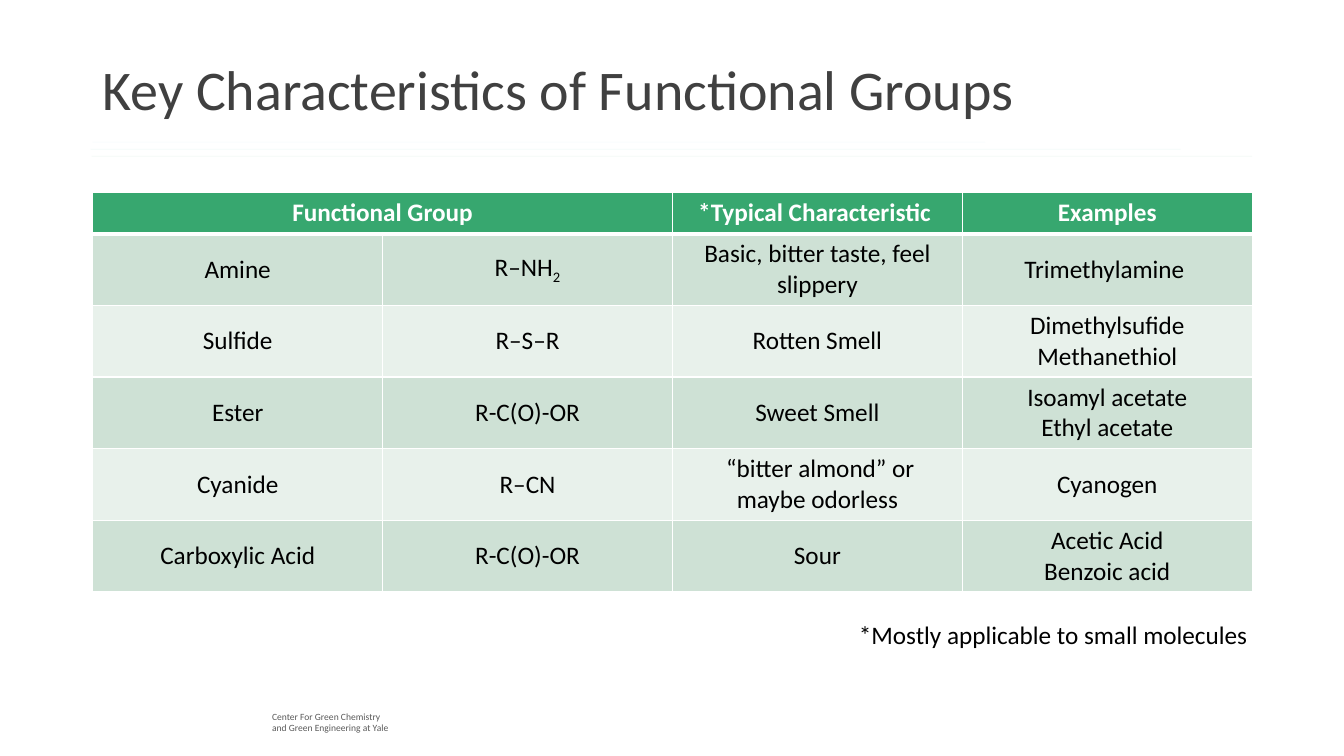
from dataclasses import dataclass

from lxml import etree
from pptx import Presentation
from pptx import util as u
from pptx.dml.color import RGBColor
from pptx.enum import shapes, text
from pptx.oxml import ns

PX = 9144
FONT = "Calibri"
COLOURS = {
    "title": "404040",
    "footer": "595959",
    "text": "000000",
    "white": "FFFFFF",
    "header": "37A76F",
    "dark_band": "CEE1D5",
    "light_band": "E8F1EB",
    "blue_rule": "4EB3CF",
    "teal_rule": "44C1A3",
}
RULE_ALPHA = 5000
TABLE_LEFT, TABLE_TOP, TABLE_WIDTH = 92, 191, 1150
HEADER_HEIGHT, ROW_HEIGHT = 41, 71


@dataclass
class Rule:
    left: int
    right: int
    y: int
    colour: str


@dataclass
class TextBox:
    content: str
    left: int
    top: int
    width: int
    height: int
    size: float
    colour: str
    anchor: text.MSO_ANCHOR = text.MSO_ANCHOR.TOP
    line_spacing: float | None = None
    wrap: bool = True


RULES = [
    Rule(92, 977, 141, "blue_rule"),
    Rule(90, 1171, 148, "teal_rule"),
    Rule(91, 1242, 155, "header"),
]

TEXT_BOXES = [
    TextBox("Center For Green Chemistry\nand Green Engineering at Yale",
            260, 700, 186, 33, 6.8, "footer"),
    TextBox("Key Characteristics of Functional Groups",
            92, 19, 1150, 145, 40, "title", text.MSO_ANCHOR.MIDDLE, 0.9),
    TextBox("*Mostly applicable to small molecules",
            842, 609, 410, 40, 18, "text", wrap=False),
]

ROWS = [
    ("Functional Group", "", "*Typical Characteristic ", "Examples"),
    ("Amine", "R–NH_2", "Basic, bitter taste, feel slippery", "Trimethylamine "),
    ("Sulfide", "R–S–R", "Rotten Smell", "Dimethylsufide Methanethiol"),
    ("Ester", "R-C(O)-OR", "Sweet Smell", "Isoamyl acetate\nEthyl acetate"),
    ("Cyanide", "R–CN", " “bitter almond” or maybe odorless", "Cyanogen"),
    ("Carboxylic Acid", "R-C(O)-OR", "Sour", "Acetic Acid\nBenzoic acid"),
]


def px(length: int) -> u.Emu:
    return u.Emu(length * PX)


def rgb(name: str) -> RGBColor:
    return RGBColor.from_string(COLOURS[name])


def write_text(frame, content: str, *, size: float, colour: str, bold: bool = False,
               align=text.PP_ALIGN.LEFT, line_spacing: float | None = None) -> None:
    for index, line in enumerate(content.split("\n")):
        paragraph = frame.add_paragraph() if index else frame.paragraphs[0]
        paragraph.alignment = align
        paragraph.line_spacing = line_spacing
        for part_index, part in enumerate(line.split("_")):
            run = paragraph.add_run()
            run.text = part
            run.font.name = FONT
            run.font.size = u.Pt(size)
            run.font.bold = bold
            run.font.color.rgb = rgb(colour)
            if part_index % 2:
                run._r.get_or_add_rPr().set("baseline", "-25000")


def add_text_box(slide, box: TextBox) -> None:
    shape = slide.shapes.add_textbox(px(box.left), px(box.top), px(box.width), px(box.height))
    shape.text_frame.word_wrap = box.wrap
    shape.text_frame.vertical_anchor = box.anchor
    write_text(shape.text_frame, box.content, size=box.size, colour=box.colour,
               line_spacing=box.line_spacing)


def add_rule(slide, rule: Rule) -> None:
    connector = slide.shapes.add_connector(
        shapes.MSO_CONNECTOR.STRAIGHT, px(rule.left), px(rule.y), px(rule.right), px(rule.y))
    connector.line.color.rgb = rgb(rule.colour)
    connector.line.width = u.Pt(0.5)
    properties = connector._element.spPr
    colour = properties.find(".//" + ns.qn("a:srgbClr"))
    etree.SubElement(colour, ns.qn("a:alpha"), val=str(RULE_ALPHA))
    etree.SubElement(properties, ns.qn("a:effectLst"))


def add_borders(cell, bottom: int) -> None:
    properties = cell._tc.get_or_add_tcPr()
    for side, width in (("L", 1), ("R", 1), ("T", 1), ("B", bottom)):
        line = etree.SubElement(properties, ns.qn(f"a:ln{side}"), w=str(u.Pt(width)))
        fill = etree.SubElement(line, ns.qn("a:solidFill"))
        etree.SubElement(fill, ns.qn("a:srgbClr"), val=COLOURS["white"])


def add_group_table(slide) -> None:
    columns = len(ROWS[0])
    height = HEADER_HEIGHT + ROW_HEIGHT * (len(ROWS) - 1)
    table = slide.shapes.add_table(len(ROWS), columns, px(TABLE_LEFT), px(TABLE_TOP),
                                   px(TABLE_WIDTH), px(height)).table
    for column in table.columns:
        column.width = u.Emu(px(TABLE_WIDTH) // columns)
    for row_index, values in enumerate(ROWS):
        header = row_index == 0
        table.rows[row_index].height = px(HEADER_HEIGHT if header else ROW_HEIGHT)
        band = "header" if header else "dark_band" if row_index % 2 else "light_band"
        for column_index, value in enumerate(values):
            cell = table.cell(row_index, column_index)
            add_borders(cell, bottom=3 if header or row_index == 0 else 1)
            cell.fill.solid()
            cell.fill.fore_color.rgb = rgb(band)
            cell.vertical_anchor = text.MSO_ANCHOR.MIDDLE
            cell.margin_left = cell.margin_right = px(14)
            cell.margin_top = cell.margin_bottom = px(5)
            if value:
                write_text(cell.text_frame, value, size=18, bold=header,
                           colour="white" if header else "text",
                           align=text.PP_ALIGN.CENTER)
    table.cell(0, 0).merge(table.cell(0, 1))


def main() -> None:
    presentation = Presentation()
    presentation.slide_width, presentation.slide_height = px(1333), px(750)
    slide = presentation.slides.add_slide(presentation.slide_layouts[6])
    for rule in RULES:
        add_rule(slide, rule)
    add_group_table(slide)
    for box in TEXT_BOXES:
        add_text_box(slide, box)
    presentation.save("out.pptx")


if __name__ == "__main__":
    main()
